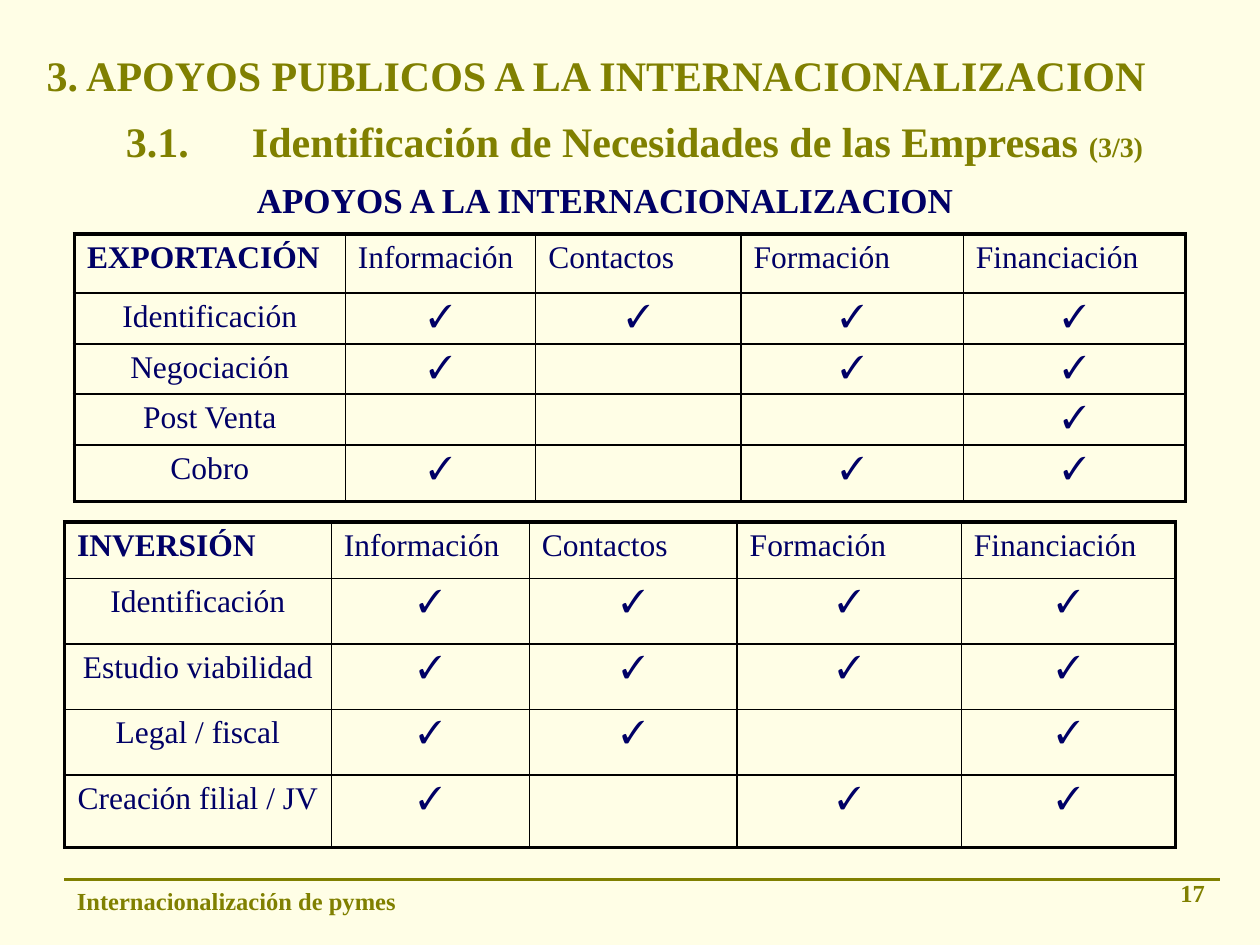
from lxml.etree import SubElement
from pptx import Presentation
from pptx.dml.color import RGBColor
from pptx.enum.shapes import MSO_CONNECTOR
from pptx.enum.text import MSO_ANCHOR, PP_ALIGN
from pptx.oxml import parse_xml
from pptx.oxml.ns import nsdecls, qn
from pptx.util import Cm, Pt

CREAM = RGBColor(0xFF, 0xFE, 0xE6)
OLIVE = RGBColor(0x80, 0x80, 0x00)
NAVY = RGBColor(0x00, 0x00, 0x66)
BLACK = RGBColor(0x00, 0x00, 0x00)
FONT = "Times New Roman"
OUTER, INNER = Pt(2.25), Pt(1)
SUPPORTS = ["Información", "Contactos", "Formación", "Financiación"]

# Each row: its stage, then whether each of the four supports applies.
EXPORT_ROWS = [
    ("Identificación", (1, 1, 1, 1)),
    ("Negociación", (1, 0, 1, 1)),
    ("Post Venta", (0, 0, 0, 1)),
    ("Cobro", (1, 0, 1, 1)),
]
INVESTMENT_ROWS = [
    ("Identificación", (1, 1, 1, 1)),
    ("Estudio viabilidad", (1, 1, 1, 1)),
    ("Legal / fiscal", (1, 1, 0, 1)),
    ("Creación filial / JV", (1, 0, 1, 1)),
]


def add_span(para, text, size, color, bold=True):
    span = para.add_run()
    span.text = text
    span.font.name = FONT
    span.font.size = Pt(size)
    span.font.bold = bold
    span.font.color.rgb = color


def add_text(page, box, spans, color, align=PP_ALIGN.LEFT, anchor=MSO_ANCHOR.MIDDLE):
    """Place one paragraph of (text, size) spans in a box given in cm."""
    frame = page.shapes.add_textbox(*map(Cm, box)).text_frame
    frame.word_wrap = True
    frame.vertical_anchor = anchor
    para = frame.paragraphs[0]
    para.alignment = align
    for text, size in spans:
        add_span(para, text, size, color)


def set_borders(cell, widths):
    """Draw the left, right, top and bottom borders of a cell."""
    properties = cell._tc.get_or_add_tcPr()
    for position, (side, width) in enumerate(zip("LRTB", widths)):
        properties.insert(position, parse_xml(
            f'<a:ln{side} {nsdecls("a")} w="{width}"><a:solidFill>'
            f'<a:srgbClr val="{BLACK}"/></a:solidFill></a:ln{side}>'))


def add_support_table(page, box, columns, heights, name, stages):
    grid = [[name, *SUPPORTS]]
    grid += [[stage, *("✓" if mark else "" for mark in marks)] for stage, marks in stages]
    table = page.shapes.add_table(len(heights), len(columns), *map(Cm, box)).table
    table.first_row = table.horz_banding = False
    for column, width in zip(table.columns, columns):
        column.width = Cm(width)
    last_row, last_column = len(heights) - 1, len(columns) - 1
    for r, (height, texts) in enumerate(zip(heights, grid)):
        table.rows[r].height = Cm(height)
        for c, text in enumerate(texts):
            cell = table.cell(r, c)
            cell.fill.background()
            edges = (c == 0, c == last_column, r == 0, r == last_row)
            set_borders(cell, [OUTER if edge else INNER for edge in edges])
            para = cell.text_frame.paragraphs[0]
            para.alignment = PP_ALIGN.CENTER if r else PP_ALIGN.LEFT
            if text:
                add_span(para, text, 18, NAVY, bold=(r == 0 and c == 0))


def add_headings(page, box):
    left, top, width = box
    add_text(page, (left, top, width, 1.6),
             [("3. APOYOS PUBLICOS A LA INTERNACIONALIZACION", 24)], OLIVE)
    add_text(page, (left + 1.6, top + 1.42, width - 2.2, 1.4),
             [("3.1. \tIdentificación de Necesidades de las Empresas ", 24), ("(3/3)", 16)],
             OLIVE)
    add_text(page, (left + 1.21, top + 2.62, 20.6, 1.4),
             [("APOYOS A LA INTERNACIONALIZACION", 20)], NAVY, PP_ALIGN.CENTER)


def add_footer(page, box):
    left, top, width = box
    rule = page.shapes.add_connector(
        MSO_CONNECTOR.STRAIGHT, Cm(left), Cm(top), Cm(left + width), Cm(top))
    rule.line.color.rgb = OLIVE
    rule.line.width = Pt(2.25)
    SubElement(rule._element.spPr, qn("a:effectLst"))
    add_text(page, (left, top, 8.05, 0.86), [("Internacionalización de pymes", 14)],
             OLIVE, anchor=MSO_ANCHOR.TOP)
    add_text(page, (left + width - 5.33, top - 0.15, 5.28, 1.27), [("17", 14)],
             OLIVE, PP_ALIGN.RIGHT, MSO_ANCHOR.TOP)


def main():
    deck = Presentation()
    deck.slide_width, deck.slide_height = Cm(25.4), Cm(19.05)
    page = deck.slides.add_slide(deck.slide_layouts[6])
    page.background.fill.solid()
    page.background.fill.fore_color.rgb = CREAM

    add_headings(page, (0.69, 0.71, 24))
    add_support_table(page, (1.5, 4.72, 22.4, 5.38), [5.46, 3.84, 4.14, 4.48, 4.48],
                      [1.19, 1.02, 0.99, 1.02, 1.14], "EXPORTACIÓN", EXPORT_ROWS)
    add_support_table(page, (1.3, 10.52, 22.4, 6.6), [5.38, 3.99, 4.19, 4.52, 4.32],
                      [1.14, 1.32, 1.32, 1.32, 1.47], "INVERSIÓN", INVESTMENT_ROWS)
    add_footer(page, (1.3, 17.73, 23.29))
    deck.save("out.pptx")


if __name__ == "__main__":
    main()
